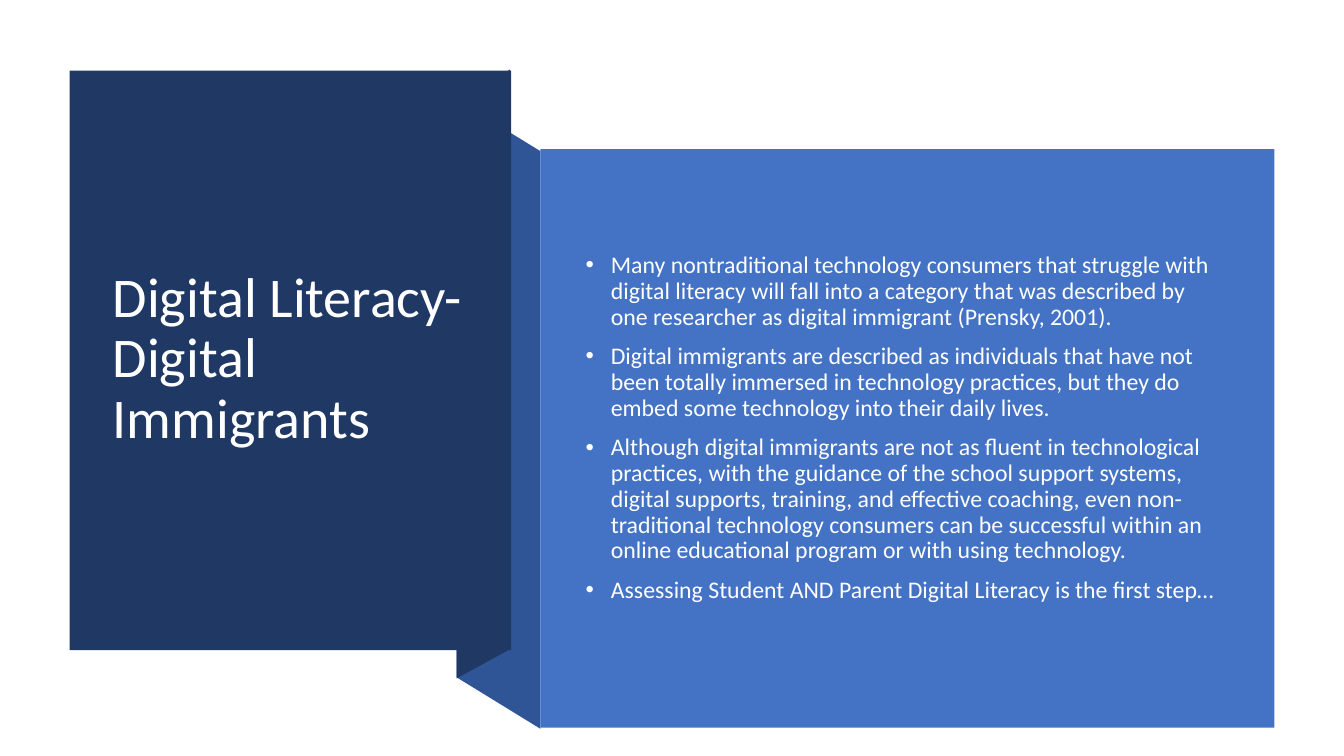
from lxml.etree import SubElement
from pptx import Presentation
from pptx.dml.color import RGBColor
from pptx.enum.shapes import MSO_SHAPE
from pptx.enum.text import MSO_ANCHOR
from pptx.oxml.ns import qn
from pptx.util import Inches, Pt

TITLE = "Digital Literacy- Digital Immigrants"
POINTS = [
    "Many nontraditional technology consumers that struggle with digital literacy will fall "
    "into a category that was described by one researcher as digital immigrant (Prensky, 2001).",
    "Digital immigrants are described as individuals that have not been totally immersed in "
    "technology practices, but they do embed some technology into their daily lives.",
    "Although digital immigrants are not as fluent in technological practices, with the guidance "
    "of the school support systems, digital supports, training, and effective coaching, even "
    "non-traditional technology consumers can be successful within an online educational program "
    "or with using technology.",
    "Assessing Student AND Parent Digital Literacy is the first step…",
]
COLORS = {"navy": "203864", "fold": "2F5597", "panel": "4472C4",
          "title": "FFFFFF", "body": "FEFFFF"}
FONT = "Calibri"

# Left, top, width, height in inches
TITLE_PANEL = (0.69, 0.7, 4.38, 5.75)
BODY_PANEL = (5.36, 1.48, 7.28, 5.74)
TITLE_BOX = (1.02, 1.07, 3.71, 4.99)
BODY_BOX = (5.71, 1.88, 6.51, 4.74)

# Corner points of the folded ribbon, back to front
FOLDS = [
    ("fold", [(5.36, 7.23), (4.53, 6.72), (4.53, 0.99), (5.36, 1.5)]),
    ("navy", [(5.06, 6.44), (4.53, 6.73), (4.53, 0.98), (5.06, 0.69)]),
]


def paint(shape, color):
    shape.shadow.inherit = False
    shape.fill.solid()
    shape.fill.fore_color.rgb = RGBColor.from_string(COLORS[color])
    shape.line.fill.background()


def add_panel(page, area, color):
    paint(page.shapes.add_shape(MSO_SHAPE.RECTANGLE, *map(Inches, area)), color)


def add_fold(page, corners, color):
    start, *others = [(Inches(x), Inches(y)) for x, y in corners]
    builder = page.shapes.build_freeform(*start)
    builder.add_line_segments(others, close=True)
    paint(builder.convert_to_shape(), color)


def add_bullet(para, indent):
    properties = para._p.get_or_add_pPr()
    properties.set("marL", str(indent))
    properties.set("indent", str(-indent))
    SubElement(properties, qn("a:buFont")).set("typeface", "Arial")
    SubElement(properties, qn("a:buChar")).set("char", "•")


def add_text(page, area, lines, size, color, space_before=0, bullets=False):
    box = page.shapes.add_textbox(*map(Inches, area))
    frame = box.text_frame
    frame.word_wrap = True
    frame.vertical_anchor = MSO_ANCHOR.MIDDLE
    for index, line in enumerate(lines):
        para = frame.add_paragraph() if index else frame.paragraphs[0]
        para.line_spacing = 0.9
        para.space_before = Pt(space_before)
        if bullets:
            add_bullet(para, Inches(0.25))
        span = para.add_run()
        span.text = line
        span.font.name = FONT
        span.font.size = Pt(size)
        span.font.color.rgb = RGBColor.from_string(COLORS[color])


def main():
    deck = Presentation()
    deck.slide_width, deck.slide_height = Inches(13.33), Inches(7.5)
    page = deck.slides.add_slide(deck.slide_layouts[6])
    for color, corners in FOLDS:
        add_fold(page, corners, color)
    add_panel(page, TITLE_PANEL, "navy")
    add_text(page, TITLE_BOX, [TITLE], size=40, color="title")
    add_panel(page, BODY_PANEL, "panel")
    add_text(page, BODY_BOX, POINTS, size=17, color="body", space_before=10, bullets=True)
    deck.save("out.pptx")


if __name__ == "__main__":
    main()
